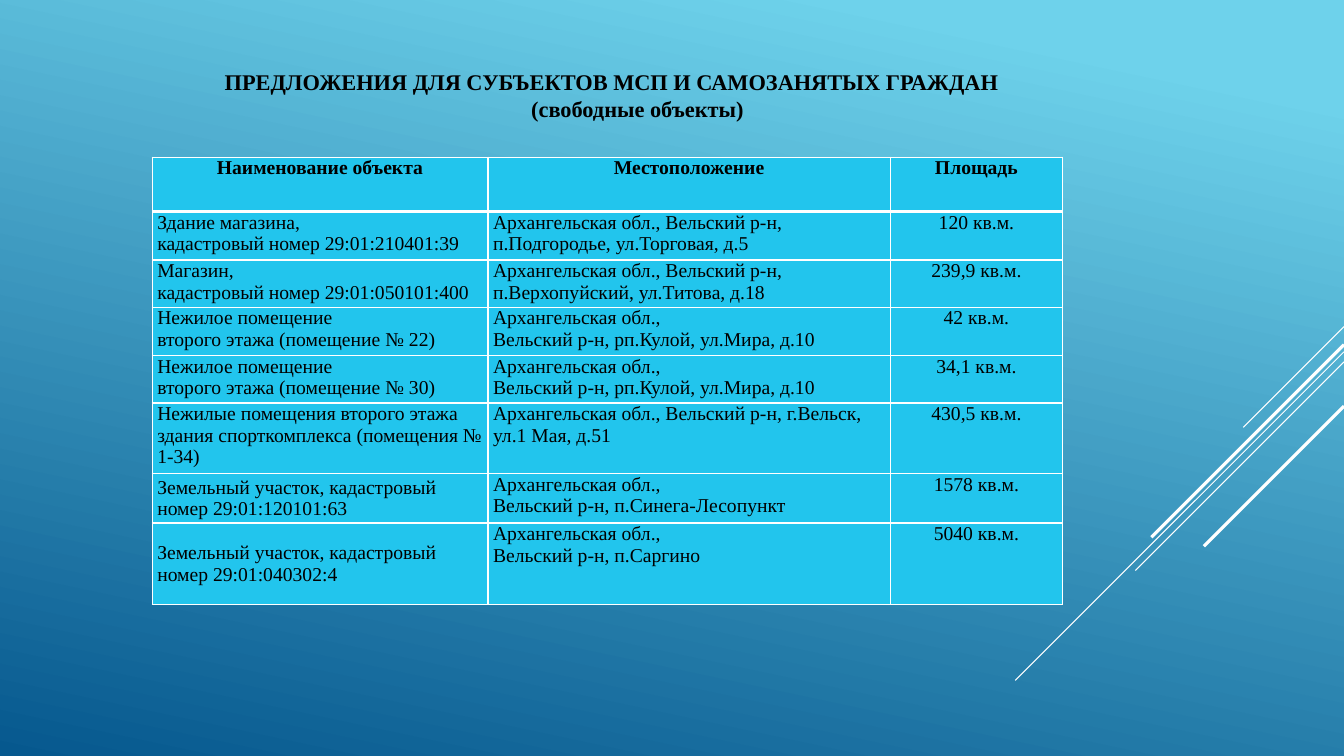
from lxml.etree import SubElement
from pptx import Presentation
from pptx.dml.color import RGBColor
from pptx.enum.shapes import MSO_CONNECTOR
from pptx.enum.text import MSO_ANCHOR, PP_ALIGN
from pptx.oxml import parse_xml
from pptx.oxml.ns import nsdecls, qn
from pptx.util import Inches, Pt

WIDTH, HEIGHT = 13.33, 7.5
FONT = "Times New Roman"
BLACK, WHITE, CELL = "000000", "FFFFFF", "22C5ED"

# Start height on the right edge, horizontal run, line width
RAYS = [(3.24, 1, 0.75), (3.49, 3.26, 0.75), (3.59, 2.07, 0.75),
        (3.42, 1.91, 2.25), (4.03, 1.39, 2.25)]

COLUMN_WIDTHS = [3.33, 3.99, 1.71]
ROW_HEIGHTS = [0.54, 0.48, 0.47, 0.48, 0.47, 0.7, 0.49, 0.81]
PREMISES = [
    ("Наименование объекта", "Местоположение", "Площадь"),
    ("Здание магазина,\nкадастровый номер 29:01:210401:39",
     "Архангельская обл., Вельский р-н, п.Подгородье, ул.Торговая, д.5", "120 кв.м."),
    ("Магазин,\nкадастровый номер 29:01:050101:400",
     "Архангельская обл., Вельский р-н, п.Верхопуйский, ул.Титова, д.18", "239,9 кв.м."),
    ("Нежилое помещение\nвторого этажа (помещение № 22)",
     "Архангельская обл.,\nВельский р-н, рп.Кулой, ул.Мира, д.10", "42 кв.м."),
    ("Нежилое помещение\nвторого этажа (помещение № 30)",
     "Архангельская обл.,\nВельский р-н, рп.Кулой, ул.Мира, д.10", "34,1 кв.м."),
    ("Нежилые помещения второго этажа здания спорткомплекса (помещения № 1-34)",
     "Архангельская обл., Вельский р-н, г.Вельск, ул.1 Мая, д.51", "430,5 кв.м."),
    ("Земельный участок, кадастровый номер 29:01:120101:63",
     "Архангельская обл.,\nВельский р-н, п.Синега-Лесопункт", "1578 кв.м."),
    ("Земельный участок, кадастровый номер 29:01:040302:4",
     "Архангельская обл.,\nВельский р-н, п.Саргино", "5040 кв.м."),
]


def color(value):
    return RGBColor.from_string(value)


def format_text(frame, size, bold, align=PP_ALIGN.LEFT):
    for para in frame.paragraphs:
        para.alignment = align
        for span in para.runs:
            font = span.font
            font.name, font.size, font.bold = FONT, Pt(size), bold
            font.color.rgb = color(BLACK)


def paint_background(slide):
    fill = slide.background.fill
    fill.gradient()
    fill.gradient_angle = 258
    for stop, (position, value) in zip(fill.gradient_stops, [(0.1, "6ED2EB"), (1, "06588E")]):
        stop.position = position
        stop.color.rgb = color(value)


def add_rays(slide, right):
    """Draw 45-degree lines running down and left from the given edge."""
    for top, run, width in RAYS:
        ray = slide.shapes.add_connector(
            MSO_CONNECTOR.STRAIGHT, Inches(right), Inches(top),
            Inches(right - run), Inches(top + run))
        ray.line.color.rgb = color(WHITE)
        ray.line.width = Pt(width)
        SubElement(ray.element.spPr, qn("a:effectLst"))


def add_title(slide, left, top, width, height):
    box = slide.shapes.add_textbox(Inches(left), Inches(top), Inches(width), Inches(height))
    frame = box.text_frame
    frame.word_wrap = True
    frame.text = "ПРЕДЛОЖЕНИЯ ДЛЯ СУБЪЕКТОВ МСП И САМОЗАНЯТЫХ ГРАЖДАН\n(свободные объекты)"
    format_text(frame, 16, True)
    frame.paragraphs[1]._p.get_or_add_pPr().set("marL", str(Inches(3.04)))


def set_borders(cell, top, bottom):
    properties = cell._tc.get_or_add_tcPr()
    sides = [("lnL", 1), ("lnR", 1), ("lnT", top), ("lnB", bottom)]
    for position, (side, width) in enumerate(sides):
        properties.insert(position, parse_xml(
            f'<a:{side} {nsdecls("a")} w="{Pt(width)}"><a:solidFill>'
            f'<a:srgbClr val="{WHITE}"/></a:solidFill></a:{side}>'))


def format_cell(cell, row, column):
    header = row == 0
    cell.margin_left = cell.margin_right = Inches(0.05)
    cell.margin_top = cell.margin_bottom = 0
    land_plot = row >= 6 and column == 0
    cell.vertical_anchor = MSO_ANCHOR.MIDDLE if land_plot else MSO_ANCHOR.TOP
    cell.fill.solid()
    cell.fill.fore_color.rgb = color(CELL)
    centered = header or column == 2
    format_text(cell.text_frame, 14, header, PP_ALIGN.CENTER if centered else PP_ALIGN.LEFT)
    set_borders(cell, top=3 if row == 1 else 1, bottom=3 if header else 1)


def add_premises_table(slide, left, top):
    table = slide.shapes.add_table(
        len(ROW_HEIGHTS), len(COLUMN_WIDTHS), Inches(left), Inches(top),
        Inches(sum(COLUMN_WIDTHS)), Inches(sum(ROW_HEIGHTS))).table
    for column, width in zip(table.columns, COLUMN_WIDTHS):
        column.width = Inches(width)
    for row, height in zip(table.rows, ROW_HEIGHTS):
        row.height = Inches(height)
    for row, texts in enumerate(PREMISES):
        for column, text in enumerate(texts):
            cell = table.cell(row, column)
            cell.text_frame.text = text
            format_cell(cell, row, column)


def main():
    deck = Presentation()
    deck.slide_width, deck.slide_height = Inches(WIDTH), Inches(HEIGHT)
    slide = deck.slides.add_slide(deck.slide_layouts[6])
    paint_background(slide)
    add_rays(slide, WIDTH)
    add_title(slide, 2.13, 0.63, 9.32, 0.64)
    add_premises_table(slide, 1.51, 1.56)
    deck.save("out.pptx")


if __name__ == "__main__":
    main()
